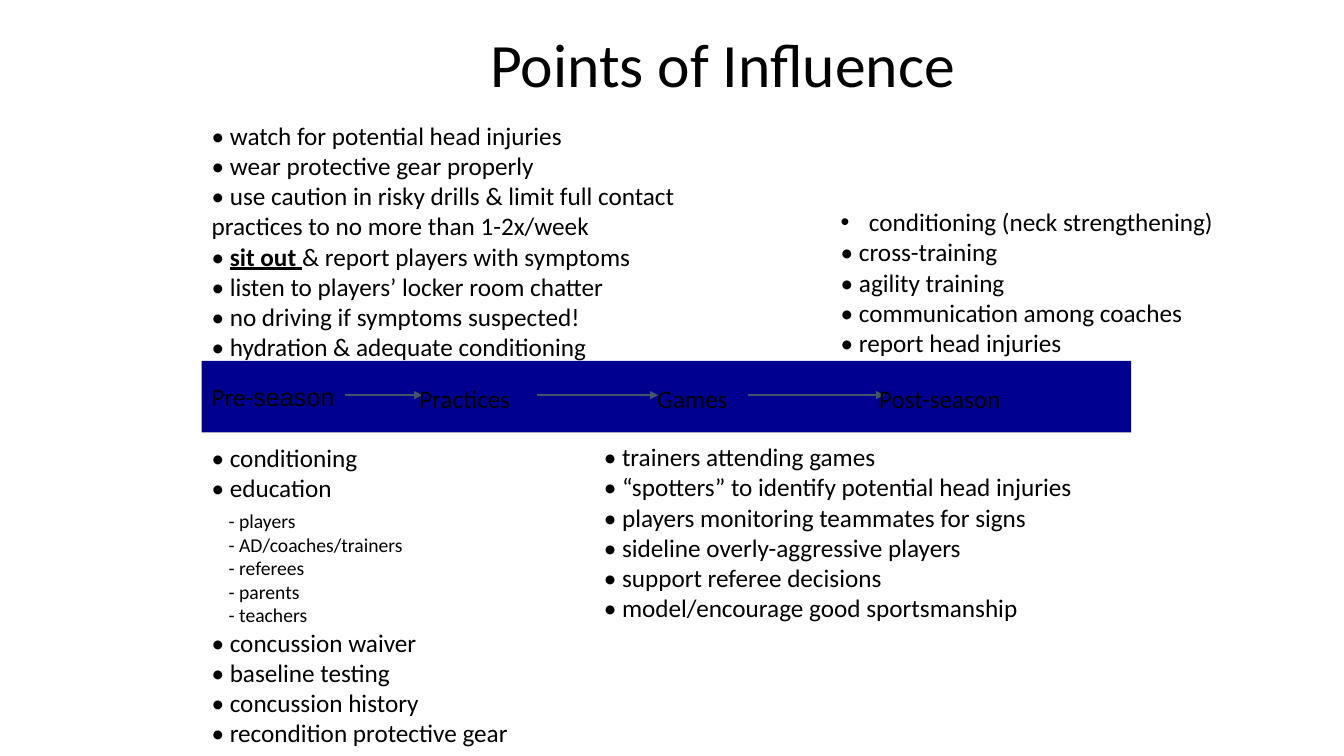
from lxml import etree
from pptx import Presentation
from pptx.dml.color import RGBColor
from pptx.enum.shapes import MSO_CONNECTOR, MSO_SHAPE
from pptx.enum.text import MSO_ANCHOR, PP_ALIGN
from pptx.oxml.ns import qn
from pptx.util import Inches, Pt

COLORS = {"text": "000000", "band": "000090", "arrow": "44546A"}


def format_runs(paragraph, size=18):
    for run in paragraph.runs:
        run.font.size = Pt(size)
        run.font.name = "Calibri"
        run.font.color.rgb = RGBColor.from_string(COLORS["text"])


def add_text(slide, left, top, width, height, lines, wrap=True):
    box = slide.shapes.add_textbox(Inches(left), Inches(top), Inches(width), Inches(height))
    box.text_frame.word_wrap = wrap
    box.text_frame.text = "\n".join(lines)
    for paragraph in box.text_frame.paragraphs:
        format_runs(paragraph)
    return box.text_frame.paragraphs


presentation = Presentation()
presentation.slide_width = Inches(13.33)
presentation.slide_height = Inches(7.5)
slide = presentation.slides.add_slide(presentation.slide_layouts[5])

# Title
title = slide.shapes.title
title.left, title.top = Inches(2.63), Inches(0)
title.width, title.height = Inches(9.08), Inches(1.25)
title.text_frame.text = "Points of Influence"
title.text_frame.vertical_anchor = MSO_ANCHOR.MIDDLE
title.text_frame.paragraphs[0].alignment = PP_ALIGN.CENTER
format_runs(title.text_frame.paragraphs[0], 44)

# Practices list, with its emphasised words
practices = add_text(slide, 2, 1.14, 4.89, 3.4, [
    "• watch for potential head injuries",
    "• wear protective gear properly",
    "• use caution in risky drills & limit full contact practices to no more than 1-2x/week",
    "• ",
    "• listen to players’ locker room chatter",
    "• no driving if symptoms suspected!",
    "• hydration & adequate conditioning",
])
sit_out = practices[3].add_run()
sit_out.text = "sit out "
sit_out.font.bold = sit_out.font.underline = True
practices[3].add_run().text = "& report players with symptoms"
format_runs(practices[3])

# Post-season list, whose first line hangs from its bullet
post_season = add_text(slide, 8.24, 2, 4.08, 2.2, [
    "conditioning (neck strengthening)",
    "• cross-training",
    "• agility training",
    "• communication among coaches",
    "• report head injuries",
])
properties = post_season[0]._p.get_or_add_pPr()
properties.set("marL", str(Inches(0.28)))
properties.set("indent", str(-Inches(0.28)))
etree.SubElement(properties, qn("a:buFont")).set("typeface", "Arial")
etree.SubElement(properties, qn("a:buChar")).set("char", "•")

# Timeline band
band = slide.shapes.add_shape(
    MSO_SHAPE.RECTANGLE, Inches(2), Inches(3.58), Inches(9.22), Inches(0.71))
band.shadow.inherit = False
band.fill.solid()
band.fill.fore_color.rgb = RGBColor.from_string(COLORS["band"])
band.line.fill.background()
band.text_frame.vertical_anchor = MSO_ANCHOR.MIDDLE
band_label = band.text_frame.paragraphs[0]
band_label.text = "Pre-"
band_label.add_run().text = "season"
band_label.alignment = PP_ALIGN.LEFT
format_runs(band_label)
band_label.runs[1].font.name = "Arial"

# Arrows, each followed by the stage it leads to
for start, end, stage, left, width in [
    (3.42, 4.19, "Practices", 4.06, 1.32),
    (5.33, 6.53, "Games", 6.42, 1.07),
    (7.42, 8.77, "Post-season", 8.62, 1.69),
]:
    arrow = slide.shapes.add_connector(
        MSO_CONNECTOR.STRAIGHT, Inches(start), Inches(3.92), Inches(end), Inches(3.92))
    arrow.line.color.rgb = RGBColor.from_string(COLORS["arrow"])
    arrow.line.width = Pt(1)
    etree.SubElement(arrow.line._get_or_add_ln(), qn("a:tailEnd")).set("type", "triangle")
    etree.SubElement(arrow._element.spPr, qn("a:effectLst"))
    add_text(slide, left, 3.75, width, 0.4, [stage], wrap=False)

# Pre-season list, with smaller indented groups
pre_season = add_text(slide, 2, 4.34, 3.34, 3.43, [
    "• conditioning",
    "• education",
    "- players",
    "- AD/coaches/trainers",
    "- referees",
    "- parents",
    "- teachers",
    "• concussion waiver",
    "• baseline testing",
    "• concussion history",
    "• recondition protective gear",
])
for paragraph in pre_season[2:7]:
    format_runs(paragraph, 14)
    paragraph._p.get_or_add_pPr().set("marL", str(Inches(0.17)))
pre_season[2].space_before = Pt(4.5)

# Games list
add_text(slide, 5.89, 4.33, 5.95, 1.9, [
    "• trainers attending games",
    "• “spotters” to identify potential head injuries",
    "• players monitoring teammates for signs",
    "• sideline overly-aggressive players",
    "• support referee decisions",
    "• model/encourage good sportsmanship",
], wrap=False)

presentation.save("out.pptx")
